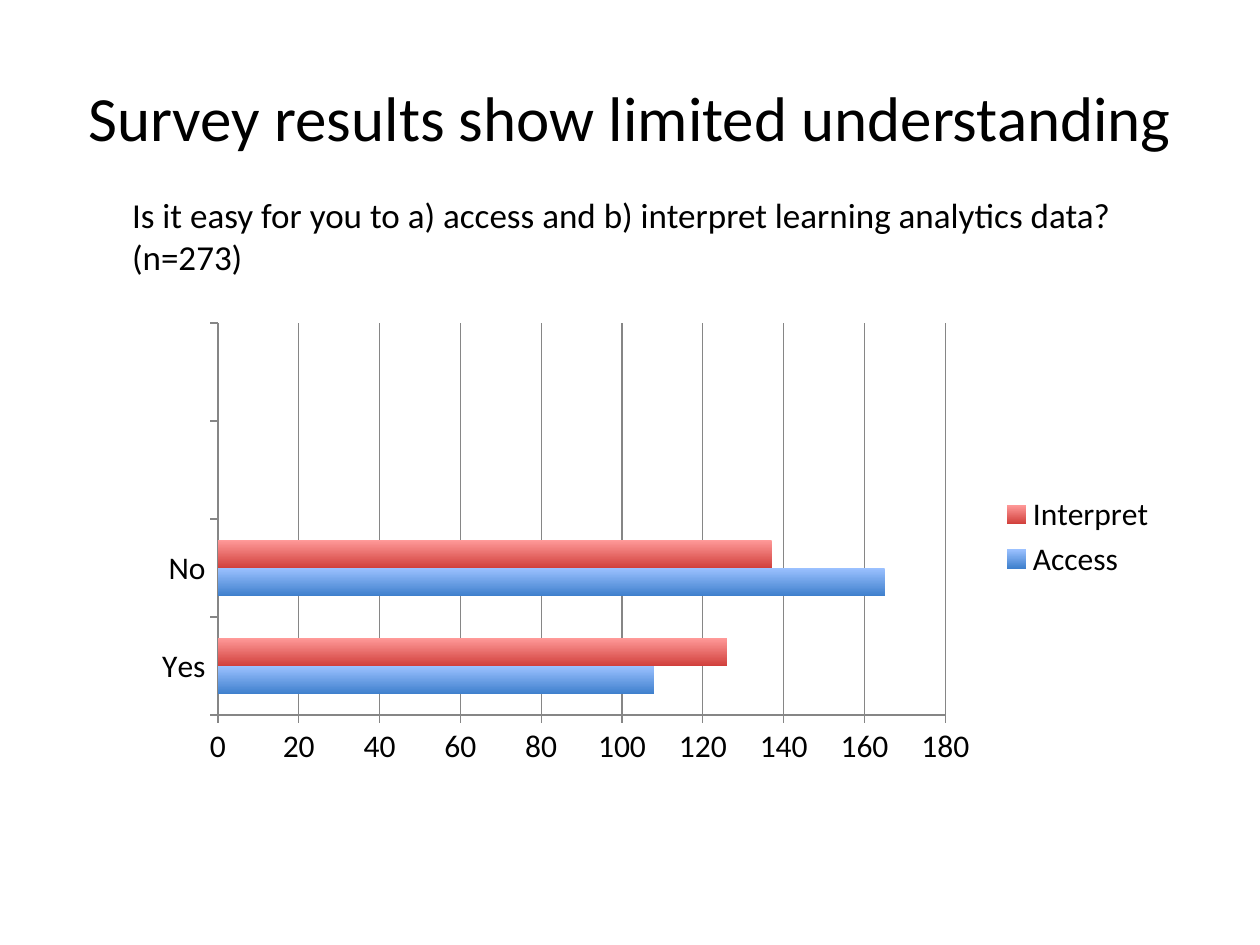
"""Build a slide with survey results as a clustered bar chart."""
from lxml import etree
from pptx import Presentation
from pptx.chart.data import CategoryChartData
from pptx.dml.color import RGBColor
from pptx.enum.chart import XL_CHART_TYPE, XL_LEGEND_POSITION, XL_TICK_MARK
from pptx.enum.text import MSO_ANCHOR, MSO_AUTO_SIZE, PP_ALIGN
from pptx.oxml.ns import qn
from pptx.util import Pt

BAR = XL_CHART_TYPE.BAR_CLUSTERED
RIGHT = XL_LEGEND_POSITION.RIGHT
OUTSIDE = XL_TICK_MARK.OUTSIDE
MIDDLE = MSO_ANCHOR.MIDDLE
NO_FIT = MSO_AUTO_SIZE.NONE
CENTER = PP_ALIGN.CENTER

TITLE = "Survey results show limited understanding"
QUESTION = "Is it easy for you to a) access and b) interpret learning analytics data? (n=273)"
CATEGORIES = ["Yes", "No", "", ""]
SERIES = [
    ("Access", [108, 165, None, None], ("blue_light", "blue_dark")),
    ("Interpret", [126, 137, None, None], ("red_light", "red_dark")),
]
COLORS = {
    "text": "000000", "axis": "868686",
    "blue_light": "9BC1FF", "blue_dark": "3F80CD",
    "red_light": "FF9A99", "red_dark": "D1403C",
}
FONT = "Calibri"
TITLE_BOX = (36, 21.6, 648, 90)
QUESTION_BOX = (68.4, 107.28, 599.76, 55.44)
CHART_BOX = (64.8, 163.44, 603.36, 286.56)
PLOT = {"x": 0.099, "y": 0.074, "w": 0.689, "h": 0.782}


def rgb(name):
    return RGBColor.from_string(COLORS[name])


def style_font(font, size):
    font.name, font.size, font.bold = FONT, Pt(size), False
    font.color.rgb = rgb("text")


def write(sp, text, size):
    tf = sp.text_frame
    tf.word_wrap, tf.auto_size = True, NO_FIT
    tf.text = text
    style_font(tf.paragraphs[0].runs[0].font, size)
    return tf


def place_plot(chart):
    area = chart._chartSpace.find(".//" + qn("c:plotArea"))
    for old in area.findall(qn("c:layout")):
        area.remove(old)
    layout = etree.Element(qn("c:layout"))
    area.insert(0, layout)
    manual = etree.SubElement(layout, qn("c:manualLayout"))
    settings = {"layoutTarget": "inner", "xMode": "edge", "yMode": "edge", **PLOT}
    for tag, value in settings.items():
        etree.SubElement(manual, qn("c:" + tag)).set("val", str(value))


def add_bars(slide):
    data = CategoryChartData()
    data.categories = CATEGORIES
    for name, values, _ in SERIES:
        data.add_series(name, values)
    chart = slide.shapes.add_chart(BAR, *map(Pt, CHART_BOX), data).chart
    chart.has_title = False
    style_font(chart.font, 18)
    chart.has_legend = True
    chart.legend.position = RIGHT
    chart.legend.include_in_layout = False

    plot = chart.plots[0]
    plot.gap_width, plot.overlap = 150, 0
    plot.vary_by_categories = False
    for series, (_, _, shades) in zip(plot.series, SERIES):
        series.invert_if_negative = False
        fill = series.format.fill
        fill.gradient()
        fill.gradient_angle = 270
        for stop, shade in zip(fill.gradient_stops, shades):
            stop.color.rgb = rgb(shade)

    value_axis = chart.value_axis
    value_axis.minimum_scale, value_axis.maximum_scale = 0, 180
    value_axis.major_unit = 20
    value_axis.has_major_gridlines = True
    for axis in (chart.category_axis, value_axis):
        axis.major_tick_mark = OUTSIDE
    for part in (chart.category_axis, value_axis, value_axis.major_gridlines):
        part.format.line.color.rgb = rgb("axis")
        part.format.line.width = Pt(0.75)
    place_plot(chart)


def main():
    prs = Presentation()
    prs.slide_width, prs.slide_height = Pt(720), Pt(540)
    slide = prs.slides.add_slide(prs.slide_layouts[5])

    title = slide.shapes.title
    title.left, title.top, title.width, title.height = map(Pt, TITLE_BOX)
    tf = write(title, TITLE, 36)
    tf.vertical_anchor = MIDDLE
    tf.paragraphs[0].alignment = CENTER

    write(slide.shapes.add_textbox(*map(Pt, QUESTION_BOX)), QUESTION, 20)
    add_bars(slide)
    prs.save("out.pptx")


if __name__ == "__main__":
    main()
